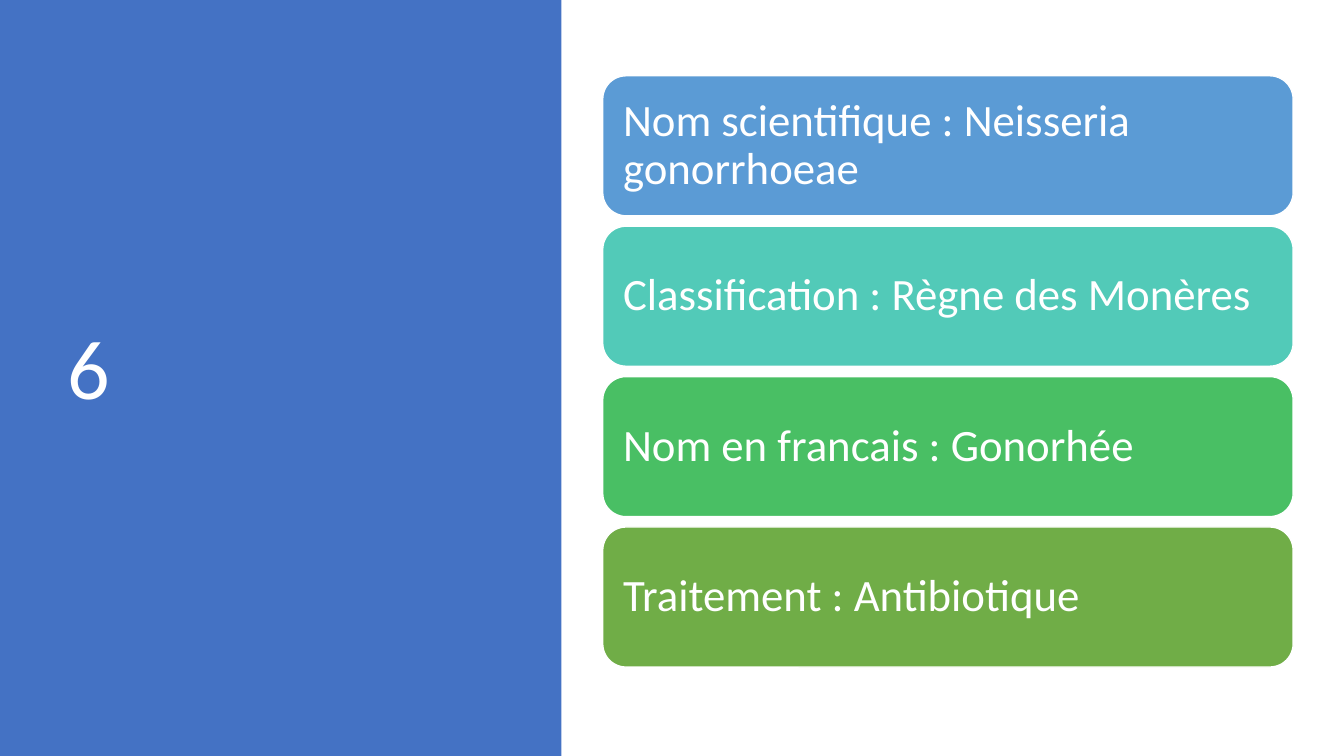
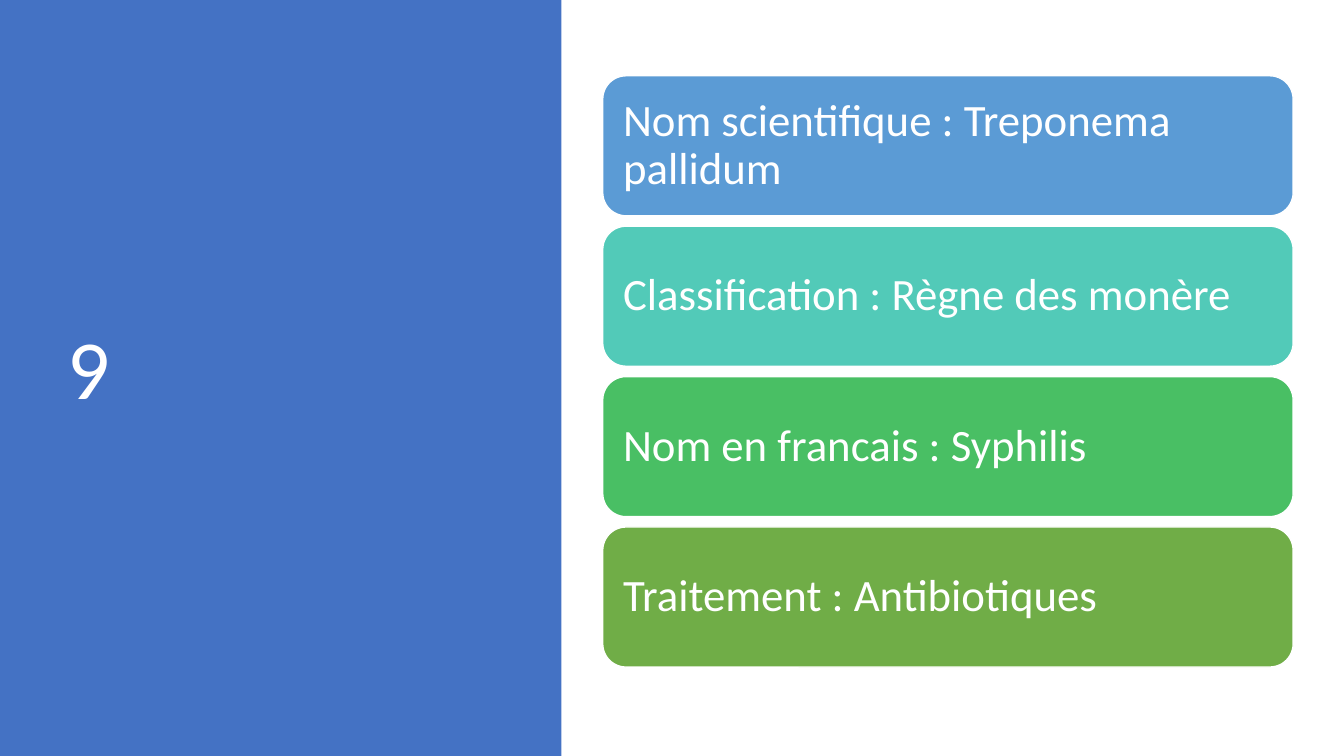
import pptx
import pptx.util
import pptx.dml.color
import pptx.enum.shapes
import pptx.enum.text

Cm = pptx.util.Cm
Pt = pptx.util.Pt
RGB = pptx.dml.color.RGBColor.from_string
SHAPE = pptx.enum.shapes.MSO_SHAPE

COLORS = {
    "band": "4472C4",
    "white": "FFFFFF",
    "Nom scientifique": "5B9BD5",
    "Classification": "52CAB8",
    "Nom en francais": "49BF64",
    "Traitement": "70AD47",
}
LABELS = ["Nom scientifique", "Classification", "Nom en francais", "Traitement"]
SLIDES = [
    ("6", ["Neisseria gonorrhoeae", "Règne des Monères", "Gonorhée", "Antibiotique"]),
    ("9", ["Treponema pallidum", "Règne des monère", "Syphilis", "Antibiotiques"]),
]
CARD_TOP, CARD_HEIGHT, CARD_PITCH = 1.91, 3.53, 3.79


def add_block(s, kind, left, top, width, height, color):
    sp = s.shapes.add_shape(kind, Cm(left), Cm(top), Cm(width), Cm(height))
    sp.shadow.inherit = False
    sp.fill.solid()
    sp.fill.fore_color.rgb = RGB(COLORS[color])
    return sp


def write_text(sp, text, size):
    tf = sp.text_frame
    tf.word_wrap = True
    tf.vertical_anchor = pptx.enum.text.MSO_ANCHOR.MIDDLE
    p = tf.paragraphs[0]
    p.alignment = pptx.enum.text.PP_ALIGN.LEFT
    p.line_spacing = 0.9
    r = p.add_run()
    r.text = text
    r.font.name = "Calibri"
    r.font.size = Pt(size)
    r.font.color.rgb = RGB(COLORS["white"])
    return tf


prs = pptx.Presentation()
prs.slide_width = Cm(33.87)
prs.slide_height = Cm(19.05)

for number, values in SLIDES:
    s = prs.slides.add_slide(prs.slide_layouts[6])
    band = add_block(s, SHAPE.RECTANGLE, 0, 0, 14.15, 19.05, "band")
    band.line.fill.background()
    title = s.shapes.add_textbox(Cm(1.45), Cm(1.73), Cm(10.57), Cm(15.29))
    write_text(title, number, 60)

    for i, (label, value) in enumerate(zip(LABELS, values)):
        top = CARD_TOP + i * CARD_PITCH
        card = add_block(s, SHAPE.ROUNDED_RECTANGLE, 15.19, top, 17.4, CARD_HEIGHT, label)
        card.line.color.rgb = RGB(COLORS["white"])
        card.line.width = Pt(1)
        tf = write_text(card, f"{label} : {value}", 32)
        tf.margin_left = tf.margin_right = Cm(0.34)
        tf.margin_top = tf.margin_bottom = Cm(0.34)

prs.save("out.pptx")
